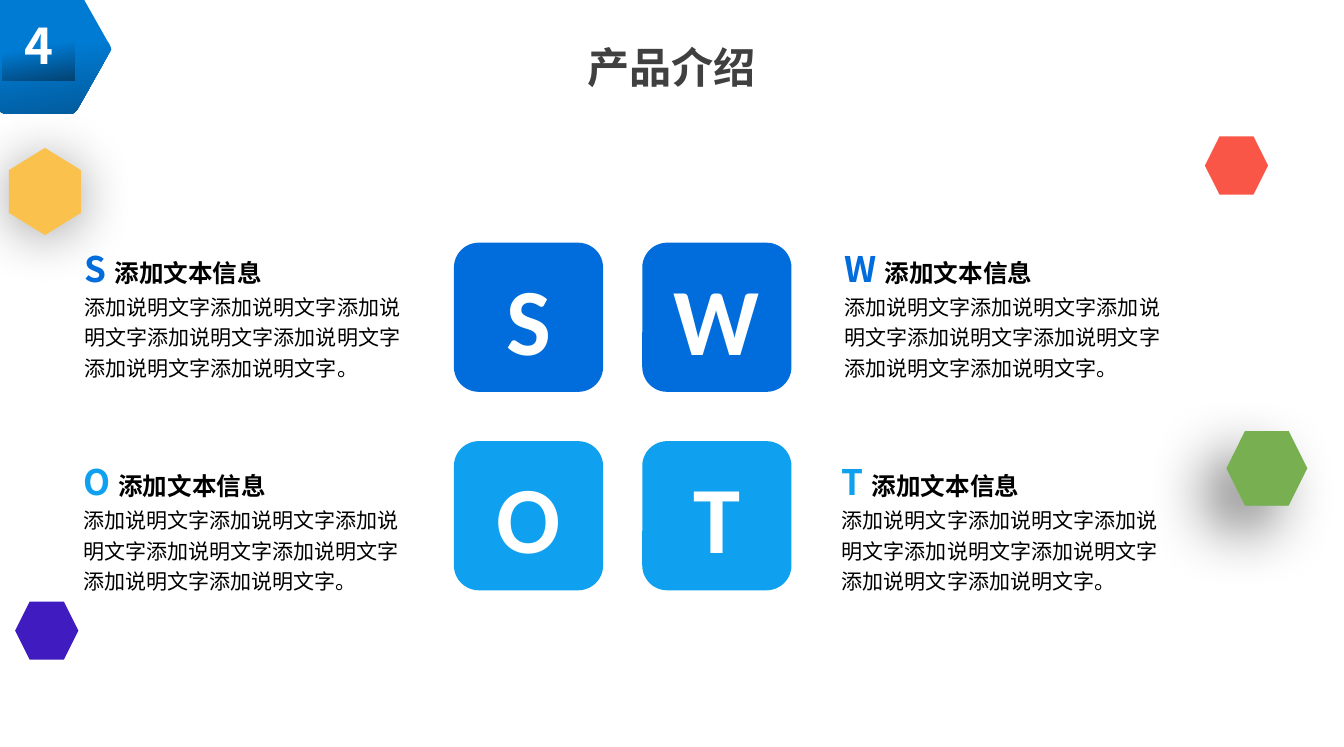
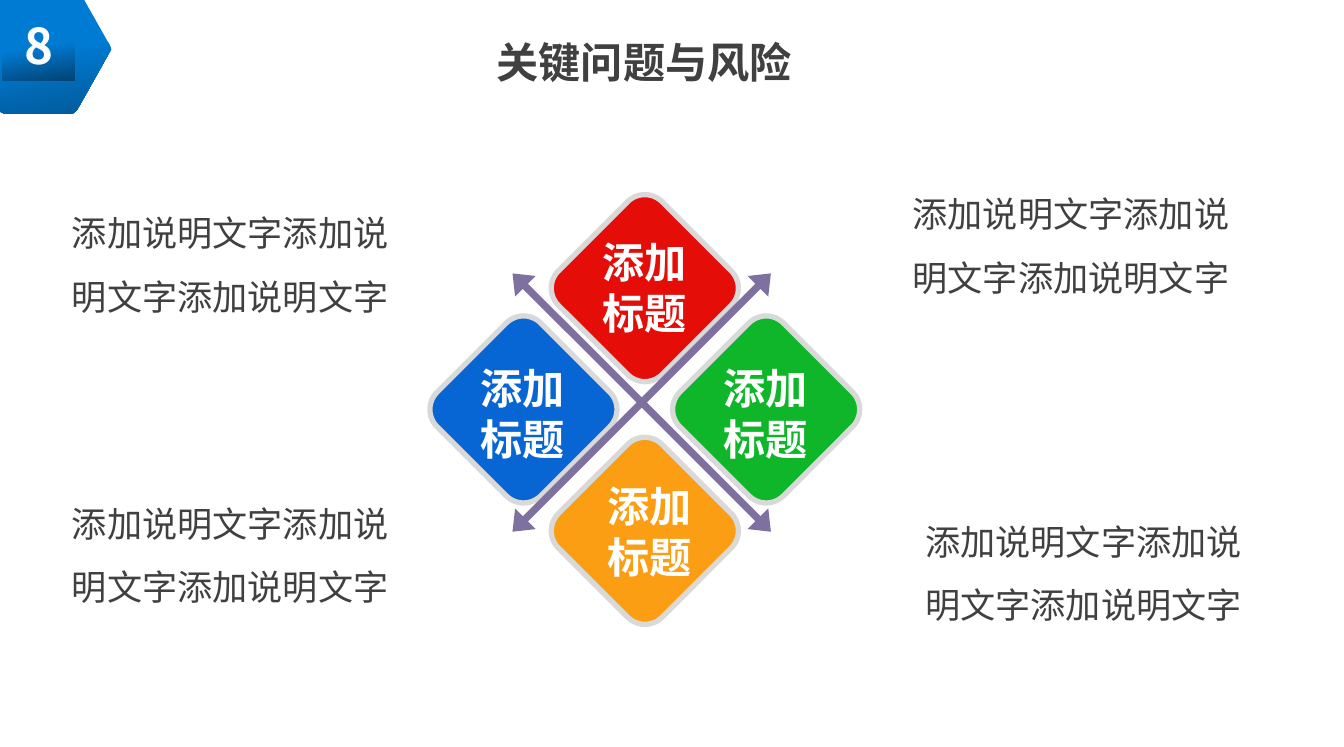
import pptx
import pptx.dml.color
import pptx.enum.dml
import pptx.enum.shapes
import pptx.enum.text
import pptx.oxml
import pptx.oxml.ns
import pptx.util
from lxml import etree

Inches = pptx.util.Inches
Shape = pptx.enum.shapes.MSO_SHAPE
Align = pptx.enum.text.PP_ALIGN
Anchor = pptx.enum.text.MSO_ANCHOR
qn = pptx.oxml.ns.qn

NOTO = "Noto Sans CJK SC"
WHITE, BLACK, GREY, SILVER = "FFFFFF", "000000", "404040", "D9D9D9"
BLUE, SKY = "016DDC", "0FA1F0"
BADGE_TOP, BADGE_BOTTOM, DIGIT_BOTTOM = "007BD3", "025A9A", "034373"
BADGE_OUTLINE = [
    (0.03, -0.13), (0.56, -0.13), (0.59, -0.12), (0.61, -0.1),
    (0.87, 0.36), (0.88, 0.39), (0.87, 0.41),
    (0.61, 0.87), (0.59, 0.89), (0.57, 0.9),
    (0.04, 0.9), (0.01, 0.89), (-0.01, 0.87),
    (-0.28, 0.41), (-0.29, 0.38), (-0.28, 0.36),
    (-0.01, -0.11), (0.01, -0.12),
]
HEADING = "添加文本信息"
DESCRIPTION = "添加说明文字" * 7 + "。"
NOTE = "添加说明文字" * 3
LABEL = "添加标题"


def color(value):
    return pptx.dml.color.RGBColor.from_string(value)


def apply(target, values):
    for name, value in values.items():
        setattr(target, name, value)


class Deck:
    def __init__(self, width, height):
        self.presentation = pptx.Presentation()
        apply(self.presentation, {"slide_width": Inches(width), "slide_height": Inches(height)})
        self.slide = None

    def new_slide(self, number, title, left, top, width):
        self.slide = self.presentation.slides.add_slide(self.presentation.slide_layouts[5])
        shape = self.slide.shapes.title
        box = {"left": left, "top": top, "width": width, "height": 0.4}
        apply(shape, {name: Inches(value) for name, value in box.items()})
        self.fill_text(shape, [[(title, 24, GREY, True)]], align=Align.CENTER, insets=(0, 0))
        self.badge(number)

    def badge(self, number):
        for inset in (0, 0.01):
            points = [(Inches(x * (1 - inset)), Inches(y * (1 - inset))) for x, y in BADGE_OUTLINE]
            builder = self.slide.shapes.build_freeform(*points[0], scale=1.0)
            builder.add_line_segments(points[1:], close=True)
            self.gradient(builder.convert_to_shape(), BADGE_BOTTOM)
        shape = self.slide.shapes.add_shape(
            Shape.RECTANGLE, Inches(0.02), Inches(0.07), Inches(0.57), Inches(0.57))
        self.gradient(shape, DIGIT_BOTTOM)
        self.fill_text(shape, [[(number, 28, WHITE, True)]], align=Align.CENTER,
                       anchor=Anchor.MIDDLE)

    def gradient(self, shape, bottom):
        shape.shadow.inherit = False
        shape.line.fill.background()
        shape.fill.gradient()
        shape.fill.gradient_angle = 280
        for stop, position, value in zip(shape.fill.gradient_stops, (0.52, 1), (BADGE_TOP, bottom)):
            stop.position = position
            stop.color.rgb = color(value)

    def preset(self, kind, box, fill, rotation=0, adjustments=(), outline=None):
        shape = self.slide.shapes.add_shape(kind, *map(Inches, box))
        shape.shadow.inherit = False
        shape.rotation = rotation
        for index, value in enumerate(adjustments):
            shape.adjustments[index] = value
        shape.fill.solid()
        shape.fill.fore_color.rgb = color(fill)
        if outline:
            shape.line.color.rgb = color(outline)
            shape.line.width = pptx.util.Pt(3)
        else:
            shape.line.fill.background()
        return shape

    def shadow(self, shape, opacity, blur, distance, direction):
        effects = shape._element.spPr.find(qn("a:effectLst"))
        outer = etree.SubElement(effects, qn("a:outerShdw"), {
            "blurRad": str(pptx.util.Pt(blur)), "dist": str(pptx.util.Pt(distance)),
            "dir": str(direction * 60000), "algn": "ctr", "rotWithShape": "0"})
        shade = etree.SubElement(outer, qn("a:srgbClr"), {"val": BLACK})
        etree.SubElement(shade, qn("a:alpha"), {"val": str(opacity * 1000)})

    def text(self, box, paragraphs, **style):
        shape = self.slide.shapes.add_textbox(*map(Inches, box))
        self.fill_text(shape, paragraphs, **style)

    def fill_text(self, shape, paragraphs, align=Align.LEFT, anchor=Anchor.TOP,
                  spacing=1.0, insets=(0.1, 0.05), font=NOTO):
        frame = shape.text_frame
        horizontal, vertical = map(Inches, insets)
        apply(frame, {
            "word_wrap": True, "auto_size": pptx.enum.text.MSO_AUTO_SIZE.NONE,
            "vertical_anchor": anchor, "margin_left": horizontal, "margin_right": horizontal,
            "margin_top": vertical, "margin_bottom": vertical})
        for index, runs in enumerate(paragraphs):
            paragraph = frame.add_paragraph() if index else frame.paragraphs[0]
            apply(paragraph, {"alignment": align, "line_spacing": spacing})
            for content, size, value, bold in runs:
                run = paragraph.add_run()
                run.text = content
                apply(run.font, {"size": pptx.util.Pt(size), "bold": bold, "name": font})
                run.font.color.rgb = color(value)
                etree.SubElement(run._r.get_or_add_rPr(), qn("a:ea"), {"typeface": font})


def product_slide(deck):
    deck.new_slide("4", "产品介绍", 4.21, 0.33, 2.2)
    yellow = deck.preset(Shape.HEXAGON, (0.01, 1.23, 0.69, 0.57), "FAC14D", 90, (0.309,))
    deck.shadow(yellow, 37, 31, 3, 90)
    deck.preset(Shape.HEXAGON, (9.53, 1.08, 0.5, 0.46), "F95647")
    green = deck.preset(Shape.HEXAGON, (9.7, 3.41, 0.64, 0.59), "78AF51")
    deck.shadow(green, 50, 35, 20, 135)
    deck.preset(Shape.HEXAGON, (9.72, 3.43, 0.61, 0.57), "78AF51")
    deck.preset(Shape.HEXAGON, (0.12, 4.76, 0.5, 0.46), "401BC0")

    for index, (letter, text_left) in enumerate(zip("SWOT", (0.57, 6.58, 0.56, 6.56))):
        row, column = divmod(index, 2)
        fill = (BLUE, SKY)[row]
        tile = deck.preset(Shape.ROUNDED_RECTANGLE,
                           (3.59 + 1.49 * column, 1.92 + 1.57 * row, 1.18, 1.18), fill)
        deck.fill_text(tile, [[(letter, 54, WHITE, True)]], align=Align.CENTER,
                       anchor=Anchor.MIDDLE, font="Calibri")
        deck.text((text_left, 1.84 + 1.69 * row, 2.86, 1.14), [
            [(letter + " ", 20, fill, True), (HEADING, 14, BLACK, True)],
            [(DESCRIPTION, 12, BLACK, False)]], spacing=1.2)


def risk_slide(deck):
    deck.new_slide("8", "关键问题与风险", 3.9, 0.29, 2.39)
    diamonds = [(0, 1, "FB9E13"), (0, -1, "E40D08"), (-1, 0, "0766D4"), (1, 0, "0FB62A")]
    for across, down, fill in diamonds:
        deck.preset(Shape.ROUNDED_RECTANGLE, (4.52 + 0.96 * across, 2.66 + 0.96 * down, 1.16, 1.16),
                    fill, 45, outline=SILVER)
    deck.preset(Shape.QUAD_ARROW, (3.63, 1.74, 2.89, 2.89), "7E719F", 45, (0.02, 0.04, 0.05))
    for left, top in ((4.55, 1.83), (3.59, 2.83), (5.51, 2.83), (4.59, 3.76)):
        deck.text((left, top, 1.09, 0.89), [[(LABEL, 24, WHITE, True)]],
                  align=Align.CENTER, insets=(0.08, 0.04))
    for left, top, width in ((7.22, 3.9, 2.84), (0.47, 3.76, 2.72),
                             (0.47, 1.46, 2.78), (7.12, 1.31, 2.72)):
        deck.text((left, top, width, 1.11), [[(NOTE, 20, GREY, False)]], spacing=1.5)


def main():
    deck = Deck(10.63, 5.91)
    product_slide(deck)
    risk_slide(deck)
    deck.presentation.save("out.pptx")


if __name__ == "__main__":
    main()
